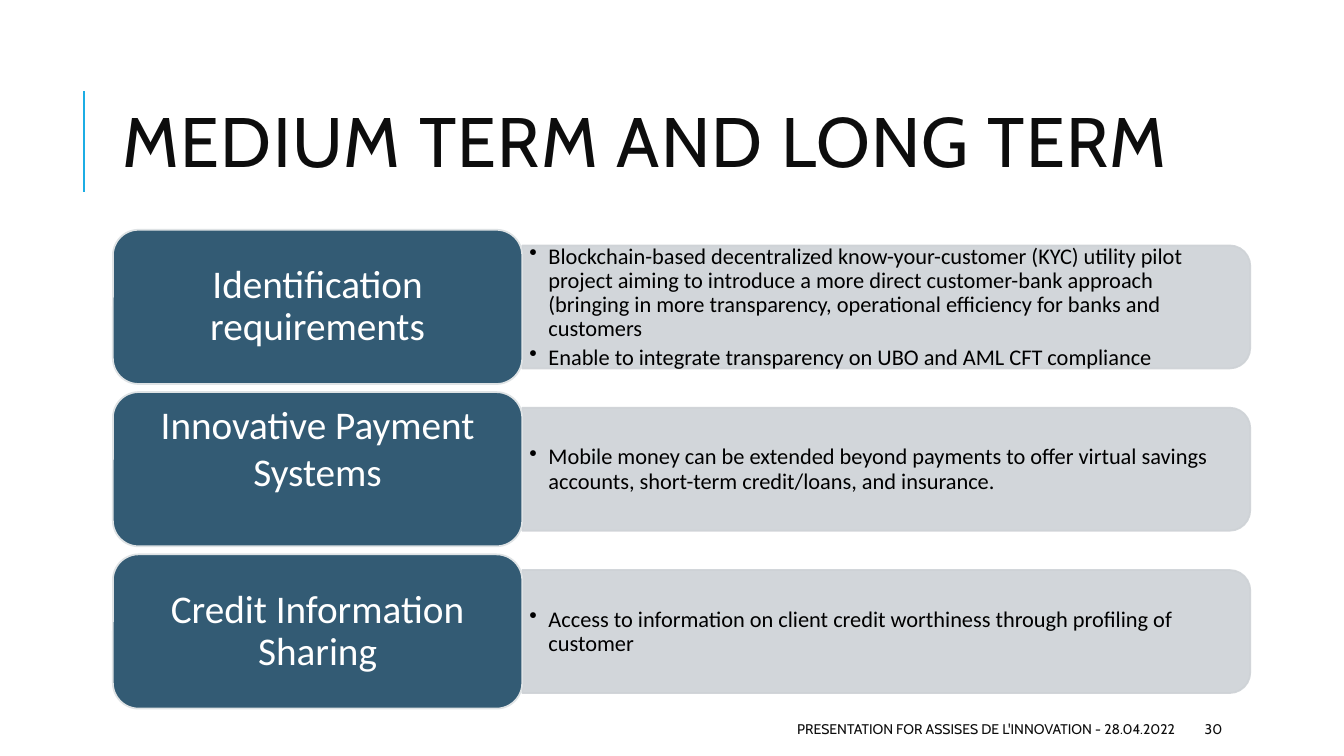
from lxml import etree
from pptx import Presentation
from pptx.dml.color import RGBColor
from pptx.enum.shapes import MSO_CONNECTOR, MSO_SHAPE
from pptx.enum.text import MSO_ANCHOR, PP_ALIGN
from pptx.oxml.ns import qn
from pptx.util import Inches, Pt

LEFT, CENTER, RIGHT = PP_ALIGN.LEFT, PP_ALIGN.CENTER, PP_ALIGN.RIGHT
MIDDLE = MSO_ANCHOR.MIDDLE
ROUND, HALF_ROUND = MSO_SHAPE.ROUNDED_RECTANGLE, MSO_SHAPE.ROUND_2_SAME_RECTANGLE
STRAIGHT = MSO_CONNECTOR.STRAIGHT

SKY = RGBColor(0x1C, 0xAD, 0xE4)
INK = RGBColor(0x0D, 0x0D, 0x0D)
BLACK = RGBColor(0, 0, 0)
WHITE = RGBColor(0xFF, 0xFF, 0xFF)
NAVY = RGBColor(0x33, 0x5B, 0x74)
EDGE = RGBColor(0xDF, 0xE3, 0xE5)
GRAY = RGBColor(0xCE, 0xD2, 0xD6)

TOP, PITCH = 2.28, 1.61
PILL_W, PILL_H = 4.06, 1.53
PILL_X = 1.12
PANEL_X, PANEL_W, PANEL_H = PILL_X + PILL_W, 7.22, 1.22

# Topic, line spacing, bottom inset, points
TOPICS = [
    ("Identification requirements", 0.9, 0.06, [
        "Blockchain-based decentralized know-your-customer (KYC) utility pilot "
        "project aiming to introduce a more direct customer-bank approach "
        "(bringing in more transparency, operational efficiency for banks and customers",
        "Enable to integrate transparency on UBO and AML CFT compliance"]),
    ("Innovative Payment Systems", 1.0, 0.49, [
        "Mobile money can be extended beyond payments to offer virtual savings "
        "accounts, short-term credit/loans, and insurance."]),
    ("Credit Information Sharing", 0.9, 0.06, [
        "Access to information on client credit worthiness through profiling of customer"]),
]


def set_frame(shape, x=0.1, top=0.05, bottom=0.05):
    frame = shape.text_frame
    frame.word_wrap = True
    frame.vertical_anchor = MIDDLE
    frame.margin_left = frame.margin_right = Inches(x)
    frame.margin_top, frame.margin_bottom = Inches(top), Inches(bottom)
    return frame


def write(para, text, size, font, color, align=LEFT, spacing=1.0):
    para.alignment = align
    para.line_spacing = spacing
    run = para.add_run()
    run.text = text
    run.font.size = Pt(size)
    run.font.name = font
    run.font.color.rgb = color
    return run


def add_label(slide, box, text, size, align=LEFT, spacing=1.0):
    label = slide.shapes.add_textbox(*map(Inches, box))
    para = set_frame(label).paragraphs[0]
    return write(para, text, size, "Cabin", INK, align, spacing)


def add_block(slide, kind, box, fill, edge):
    block = slide.shapes.add_shape(kind, *map(Inches, box))
    block.shadow.inherit = False
    block.fill.solid()
    block.fill.fore_color.rgb = fill
    block.line.color.rgb = edge
    block.line.width = Pt(1.25)
    return block


def add_panel(slide, mid):
    """Draw a gray bar, rounded on the right, around the height mid."""
    x = PANEL_X + (PANEL_W - PANEL_H) / 2
    box = (x, mid - PANEL_W / 2, PANEL_H, PANEL_W)
    panel = add_block(slide, HALF_ROUND, box, GRAY, GRAY)
    panel.rotation = 90
    for color in panel._element.spPr.iter(qn("a:srgbClr")):
        etree.SubElement(color, qn("a:alpha"), val="90000")


def add_points(slide, mid, points):
    box = (PANEL_X, mid - 0.55, 7.16, 1.11)
    frame = set_frame(slide.shapes.add_textbox(*map(Inches, box)), 0.07, 0.03, 0.03)
    for i, point in enumerate(points):
        para = frame.add_paragraph() if i else frame.paragraphs[0]
        write(para, point, 16, "Calibri", BLACK, spacing=0.9)
        para.space_after = Pt(3)
        props = para._p.get_or_add_pPr()
        props.set("marL", str(Inches(0.19)))
        props.set("indent", str(Inches(-0.19)))
        etree.SubElement(props, qn("a:buChar"), char="•")


def add_pill(slide, top, text, spacing, bottom):
    pill = add_block(slide, ROUND, (PILL_X, top, PILL_W, PILL_H), NAVY, EDGE)
    para = set_frame(pill, 0.12, 0.06, bottom).paragraphs[0]
    write(para, text, 28, "Calibri", WHITE, CENTER, spacing)


def add_rule(slide, x, top, end):
    rule = slide.shapes.add_connector(STRAIGHT, *map(Inches, (x, end, x, top)))
    rule.line.color.rgb = SKY
    rule.line.width = Pt(1.5)
    etree.SubElement(rule._element.spPr, qn("a:effectLst"))


def main():
    deck = Presentation()
    deck.slide_width, deck.slide_height = Inches(13.33), Inches(7.5)
    slide = deck.slides.add_slide(deck.slide_layouts[6])

    add_rule(slide, 0.83, 0.9, 1.9)
    title = add_label(slide, (1.12, 0.64, 10.63, 1.64),
                      "MEDIUM TERM AND LONG TERM", 50, spacing=0.8)
    title._r.get_or_add_rPr().set("spc", "100")

    for i, (topic, spacing, bottom, points) in enumerate(TOPICS):
        top = TOP + i * PITCH
        mid = top + PILL_H / 2
        add_panel(slide, mid)
        add_points(slide, mid, points)
        add_pill(slide, top, topic, spacing, bottom)

    add_label(slide, (5.3, 7.08, 6.45, 0.3),
              "PRESENTATION FOR ASSISES DE L'INNOVATION - 28.04.2022", 10, RIGHT)
    add_label(slide, (11.85, 7.08, 1.06, 0.3), "30", 10)
    deck.save("out.pptx")


if __name__ == "__main__":
    main()
